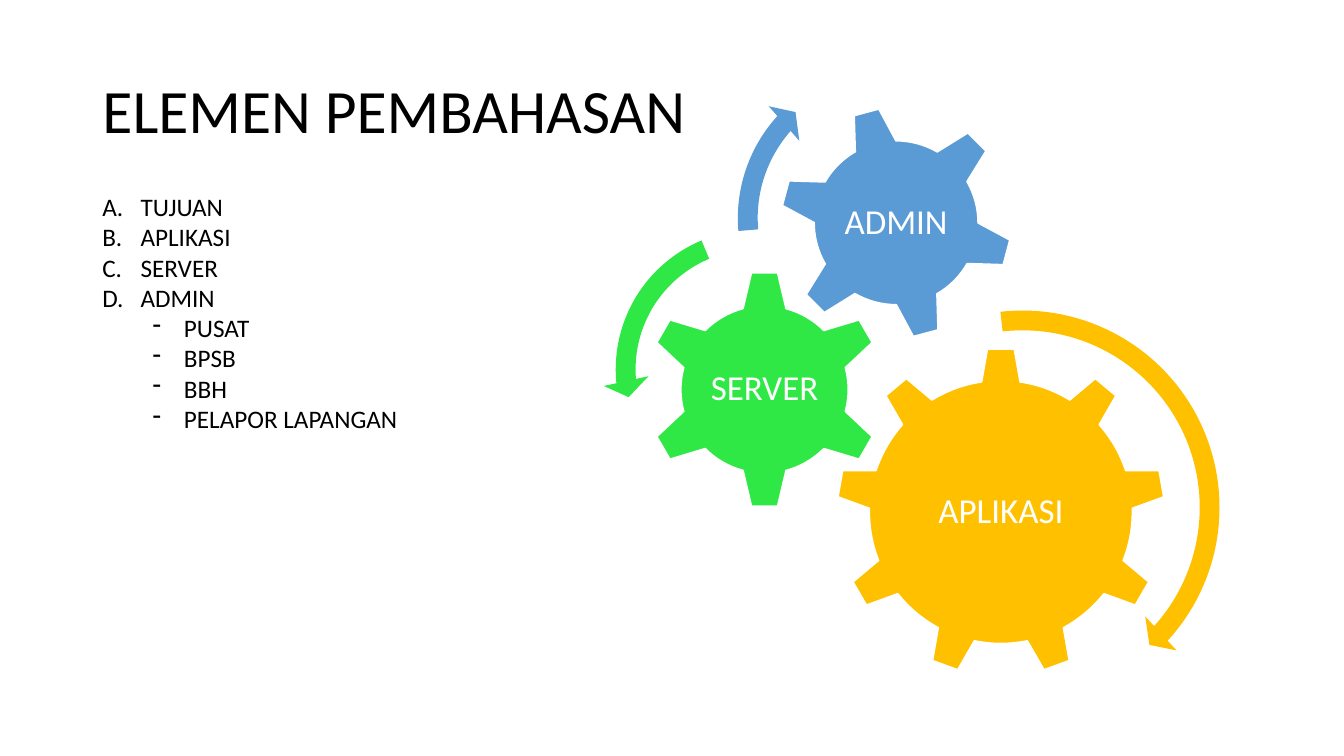
from dataclasses import dataclass

from lxml.etree import SubElement
from pptx import Presentation
from pptx.dml.color import RGBColor
from pptx.enum.shapes import MSO_SHAPE
from pptx.enum.text import MSO_ANCHOR, MSO_AUTO_SIZE, PP_ALIGN
from pptx.oxml.ns import qn
from pptx.shapes.autoshape import Shape
from pptx.shapes.shapetree import GroupShapes
from pptx.text.text import _Paragraph as Paragraph
from pptx.util import Emu, Inches, Pt

SLIDE_WIDTH, SLIDE_HEIGHT = Inches(13.333), Inches(7.5)
COLUMNS = 80  # square cells, 45 rows
FONT = "Calibri"
COLOURS = {
    "text": "000000",
    "white": "FFFFFF",
    "amber": "FFC000",
    "green": "30E845",
    "blue": "5B9BD5",
}


@dataclass(frozen=True)
class Gear:
    label: str
    kind: MSO_SHAPE
    colour: str
    column: float  # centre
    row: float  # centre
    size: float
    label_share: float
    rotation: float = 0


@dataclass(frozen=True)
class TurnArrow:
    kind: MSO_SHAPE
    colour: str
    column: float  # centre
    row: float  # centre
    size: float
    thickness: float  # percent of size
    head_width: float  # percent of size
    head_sweep: float  # degrees
    end: float  # degrees
    start: float  # degrees


@dataclass(frozen=True)
class ListLevel:
    margin: float  # inches
    hanging: float  # inches
    bullet: str
    attributes: dict[str, str]


GEARS = [
    Gear("APLIKASI", MSO_SHAPE.GEAR_9, "amber", 59.58, 30.48, 19.56, 0.6),
    Gear("SERVER", MSO_SHAPE.GEAR_6, "green", 45.51, 23.19, 14.22, 0.5),
    Gear("ADMIN", MSO_SHAPE.GEAR_6, "blue", 53.34, 13.26, 13.92, 0.56, 345),
]
ARROWS = [
    TurnArrow(MSO_SHAPE.CIRCULAR_ARROW, "amber", 60.87, 30.21, 25.02,
              4.7, 5.5, 4.98, 42.32, 263.54),
    TurnArrow(MSO_SHAPE.LEFT_CIRCULAR_ARROW, "green", 44.97, 21.99, 18.18,
              6.5, 7.5, 7.17, 174.82, 247.3),
    TurnArrow(MSO_SHAPE.CIRCULAR_ARROW, "blue", 52.95, 12.99, 19.62,
              6, 7, 6.57, 221.9, 175.14),
]
LEVELS = [
    ListLevel(0.38, 0.38, "a:buAutoNum", {"type": "alphaUcPeriod"}),
    ListLevel(0.81, 0.31, "a:buChar", {"char": "-"}),
]
TOPICS = [
    ("TUJUAN", 0),
    ("APLIKASI", 0),
    ("SERVER", 0),
    ("ADMIN", 0),
    ("PUSAT", 1),
    ("BPSB", 1),
    ("BBH", 1),
    ("PELAPOR LAPANGAN", 1),
]


def cells(count: float) -> Emu:
    return Emu(round(SLIDE_WIDTH * count / COLUMNS))


def centred_square(column: float, row: float, size: float) -> tuple[Emu, ...]:
    return (cells(column - size / 2), cells(row - size / 2),
            cells(size), cells(size))


def colour(name: str) -> RGBColor:
    return RGBColor.from_string(COLOURS[name])


def add_text(para: Paragraph, text: str, size: float, colour_name: str) -> None:
    span = para.add_run()
    span.text = text
    span.font.name = FONT
    span.font.size = Pt(size)
    span.font.color.rgb = colour(colour_name)


def add_filled_shape(shapes: GroupShapes, item: Gear | TurnArrow) -> Shape:
    shape = shapes.add_shape(
        item.kind, *centred_square(item.column, item.row, item.size))
    shape.shadow.inherit = False
    shape.fill.solid()
    shape.fill.fore_color.rgb = colour(item.colour)
    return shape


def draw_gear(shapes: GroupShapes, gear: Gear) -> None:
    shape = add_filled_shape(shapes, gear)
    shape.rotation = gear.rotation
    shape.line.color.rgb = colour("white")
    shape.line.width = Pt(1)

    label = shapes.add_textbox(*centred_square(
        gear.column, gear.row, gear.size * gear.label_share))
    frame = label.text_frame
    frame.word_wrap = True
    frame.vertical_anchor = MSO_ANCHOR.MIDDLE
    frame.margin_left = frame.margin_right = Inches(0.03)
    frame.margin_top = frame.margin_bottom = Inches(0.03)
    para = frame.paragraphs[0]
    para.alignment = PP_ALIGN.CENTER
    para.line_spacing = 0.9
    add_text(para, gear.label, 25, "white")


def draw_arrow(shapes: GroupShapes, arrow: TurnArrow) -> None:
    shape = add_filled_shape(shapes, arrow)
    shape.line.fill.background()
    angles = [degrees * 0.6
              for degrees in (arrow.head_sweep, arrow.end, arrow.start)]
    values = [arrow.thickness / 100, *angles, arrow.head_width / 100]
    for index, value in enumerate(values):
        shape.adjustments[index] = value


def format_list_item(para: Paragraph, level: int) -> None:
    style = LEVELS[level]
    para.level = level
    properties = para._p.get_or_add_pPr()
    properties.set("marL", str(Inches(style.margin)))
    properties.set("indent", str(-Inches(style.hanging)))
    SubElement(properties, qn(style.bullet), style.attributes)


def main() -> None:
    deck = Presentation()
    deck.slide_width, deck.slide_height = SLIDE_WIDTH, SLIDE_HEIGHT
    page = deck.slides.add_slide(deck.slide_layouts.get_by_name("Title Only"))

    title = page.shapes.title
    title.left, title.top = cells(5.5), cells(2.4)
    title.width, title.height = cells(69), cells(8.7)
    title.text_frame.auto_size = MSO_AUTO_SIZE.NONE
    title.text_frame.vertical_anchor = MSO_ANCHOR.MIDDLE
    heading = title.text_frame.paragraphs[0]
    heading.alignment = PP_ALIGN.LEFT
    heading.line_spacing = 0.9
    add_text(heading, "ELEMEN PEMBAHASAN", 44, "text")

    diagram = page.shapes.add_group_shape()
    for gear in GEARS:
        draw_gear(diagram.shapes, gear)
    for arrow in ARROWS:
        draw_arrow(diagram.shapes, arrow)

    box = page.shapes.add_textbox(
        cells(5.5), cells(11.1), cells(29.4), cells(15.12))
    frame = box.text_frame
    frame.word_wrap = True
    frame.auto_size = MSO_AUTO_SIZE.SHAPE_TO_FIT_TEXT
    for index, (topic, level) in enumerate(TOPICS):
        para = frame.add_paragraph() if index else frame.paragraphs[0]
        format_list_item(para, level)
        add_text(para, topic, 18, "text")

    deck.save("out.pptx")


if __name__ == "__main__":
    main()
